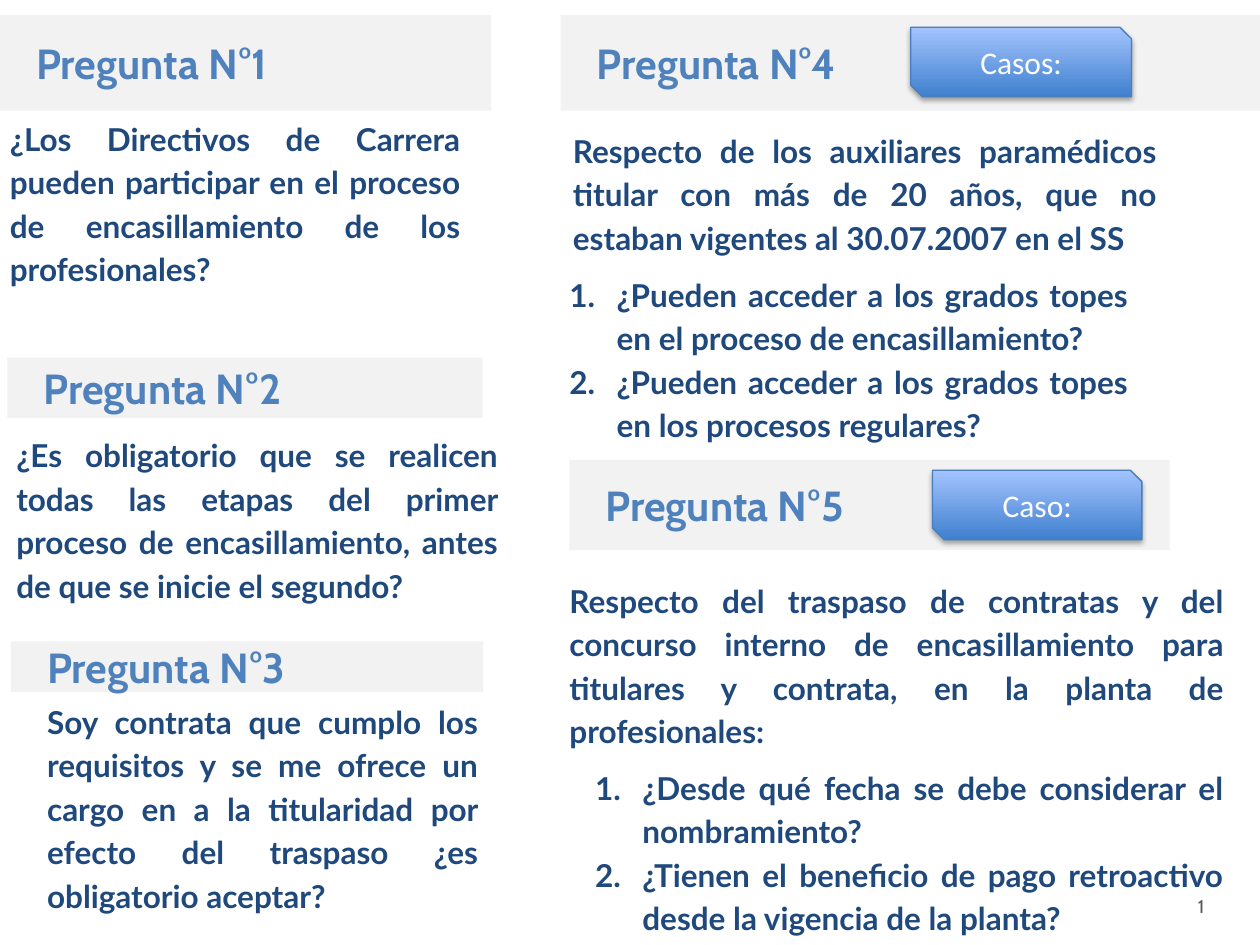
from typing import NamedTuple

from lxml import etree
from pptx import Presentation
from pptx import util as u
from pptx.dml.color import RGBColor
from pptx.enum import shapes, text
from pptx.oxml.ns import qn

GREY = RGBColor(0xF2, 0xF2, 0xF2)
BLUE = RGBColor(0x4F, 0x81, 0xBD)
NAVY = RGBColor(0x1F, 0x49, 0x7D)
WHITE = RGBColor(0xFF, 0xFF, 0xFF)
DARK_GREY = RGBColor(0x59, 0x59, 0x59)
BUTTON_LINE = RGBColor(0x4B, 0x7E, 0xBC)
BUTTON_STOPS = (RGBColor(0x3F, 0x80, 0xCE), RGBColor(0xA4, 0xC4, 0xFF))

HEADING_FONT = {"name": "Cabin", "size": u.Pt(24), "bold": True}
BODY_FONT = {"name": "Lato", "size": u.Pt(18), "bold": True}
BUTTON_FONT = {"name": "Calibri", "size": u.Pt(18), "bold": False}
NUMBER_FONT = {"name": "Cabin", "size": u.Pt(10.5), "bold": False}

HEADING_INDENT = u.Cm(0.48)
LIST_INDENT = u.Cm(0.95)


class Area(NamedTuple):
    """Left, top, width and height in centimetres."""
    left: float
    top: float
    width: float
    height: float

    def lengths(self):
        return [u.Cm(value) for value in self]


class Heading(NamedTuple):
    number: int
    area: Area


class Body(NamedTuple):
    area: Area
    lines: tuple[str, ...]
    numbered: bool = False


class Button(NamedTuple):
    label: str
    area: Area


HEADINGS = (
    Heading(1, Area(0, 0.3, 9.9, 1.93)),
    Heading(2, Area(0.15, 7.21, 9.58, 1.22)),
    Heading(3, Area(0.22, 12.93, 9.52, 1.02)),
    Heading(4, Area(11.3, 0.3, 14.4, 1.93)),
    Heading(5, Area(11.48, 9.27, 12.1, 1.82)),
)

BODIES = (
    Body(Area(-0.05, 2.18, 9.58, 3.78), (
        "¿Los Directivos de Carrera pueden participar en el proceso de "
        "encasillamiento de los profesionales?",)),
    Body(Area(0.08, 8.56, 10.21, 3.78), (
        "¿Es obligatorio que se realicen todas las etapas del primer proceso "
        "de encasillamiento, antes de que se inicie el segundo?",)),
    Body(Area(0.7, 13.93, 9.19, 4.67), (
        "Soy contrata que cumplo los requisitos y se me ofrece un cargo en a "
        "la titularidad por efecto del traspaso ¿es obligatorio aceptar?",)),
    Body(Area(11.3, 2.42, 12.27, 2.92), (
        "Respecto de los auxiliares paramédicos titular con más de 20 años, "
        "que no estaban vigentes al 30.07.2007 en el SS",)),
    Body(Area(11.23, 5.32, 11.76, 3.78), (
        "¿Pueden acceder a los grados topes en el proceso de encasillamiento?",
        "¿Pueden acceder a los grados topes en los procesos regulares?"), True),
    Body(Area(11.23, 11.49, 13.69, 3.78), (
        "Respecto del traspaso de contratas y del concurso interno de "
        "encasillamiento para titulares y contrata, en la planta de "
        "profesionales:",)),
    Body(Area(11.75, 15.26, 13.16, 3.78), (
        "¿Desde qué fecha se debe considerar el nombramiento?",
        "¿Tienen el beneficio de pago retroactivo desde la vigencia de la "
        "planta?"), True),
)

BUTTONS = (
    Button("Casos:", Area(18.36, 0.55, 4.45, 1.4)),
    Button("Caso:", Area(18.8, 9.48, 4.22, 1.4)),
)


def write(para, words: str, font: dict, color: RGBColor) -> None:
    span = para.add_run()
    span.text = words
    for name, value in font.items():
        setattr(span.font, name, value)
    span.font.color.rgb = color


def indent(para, margin: int, first: int = 0) -> None:
    properties = para._p.get_or_add_pPr()
    properties.set("marL", str(margin))
    properties.set("indent", str(first))


def add_shadow(shape) -> None:
    effects = shape._element.spPr.find(qn("a:effectLst"))
    shadow = etree.SubElement(
        effects, qn("a:outerShdw"), blurRad=str(u.Pt(3.1)),
        dist=str(u.Pt(1.8)), dir="5400000", rotWithShape="0")
    color = etree.SubElement(shadow, qn("a:srgbClr"), val="000000")
    etree.SubElement(color, qn("a:alpha"), val="35000")


def add_box(page, kind, area: Area):
    box = page.shapes.add_shape(kind, *area.lengths())
    box.shadow.inherit = False
    box.text_frame.vertical_anchor = text.MSO_ANCHOR.MIDDLE
    return box


def add_heading(page, heading: Heading) -> None:
    box = add_box(page, shapes.MSO_SHAPE.RECTANGLE, heading.area)
    box.fill.solid()
    box.fill.fore_color.rgb = GREY
    box.line.fill.background()
    para = box.text_frame.paragraphs[0]
    para.alignment = text.PP_ALIGN.LEFT
    indent(para, HEADING_INDENT)
    write(para, f"Pregunta N°{heading.number}", HEADING_FONT, BLUE)


def add_body(page, body: Body) -> None:
    frame = page.shapes.add_textbox(*body.area.lengths()).text_frame
    frame.word_wrap = True
    for index, line in enumerate(body.lines):
        para = frame.add_paragraph() if index else frame.paragraphs[0]
        para.alignment = text.PP_ALIGN.JUSTIFY
        para.line_spacing = 1.15
        if body.numbered:
            indent(para, LIST_INDENT, -LIST_INDENT)
            etree.SubElement(para._p.get_or_add_pPr(), qn("a:buAutoNum"),
                             type="arabicPeriod")
        write(para, line, BODY_FONT, NAVY)


def add_button(page, button: Button) -> None:
    box = add_box(page, shapes.MSO_SHAPE.SNIP_2_DIAG_RECTANGLE, button.area)
    box.fill.gradient()
    box.fill.gradient_angle = 90
    for stop, color in zip(box.fill.gradient_stops, BUTTON_STOPS):
        stop.color.rgb = color
    box.line.color.rgb = BUTTON_LINE
    box.line.width = u.Pt(0.75)
    add_shadow(box)
    para = box.text_frame.paragraphs[0]
    para.alignment = text.PP_ALIGN.CENTER
    write(para, button.label, BUTTON_FONT, WHITE)


def add_page_number(page) -> None:
    area = Area(23.9, 17.93, 1.22, 0.74)
    frame = page.shapes.add_textbox(*area.lengths()).text_frame
    frame.word_wrap = False
    write(frame.paragraphs[0], "1", NUMBER_FONT, DARK_GREY)


def main() -> None:
    deck = Presentation()
    deck.slide_width, deck.slide_height = u.Cm(25.4), u.Cm(19.05)
    page = deck.slides.add_slide(deck.slide_layouts[6])

    # Page number lies behind everything else
    add_page_number(page)
    # Question headings and their texts
    for heading in HEADINGS:
        add_heading(page, heading)
    for body in BODIES:
        add_body(page, body)
    # Case buttons on top of the headings
    for button in BUTTONS:
        add_button(page, button)

    deck.save("out.pptx")


if __name__ == "__main__":
    main()
